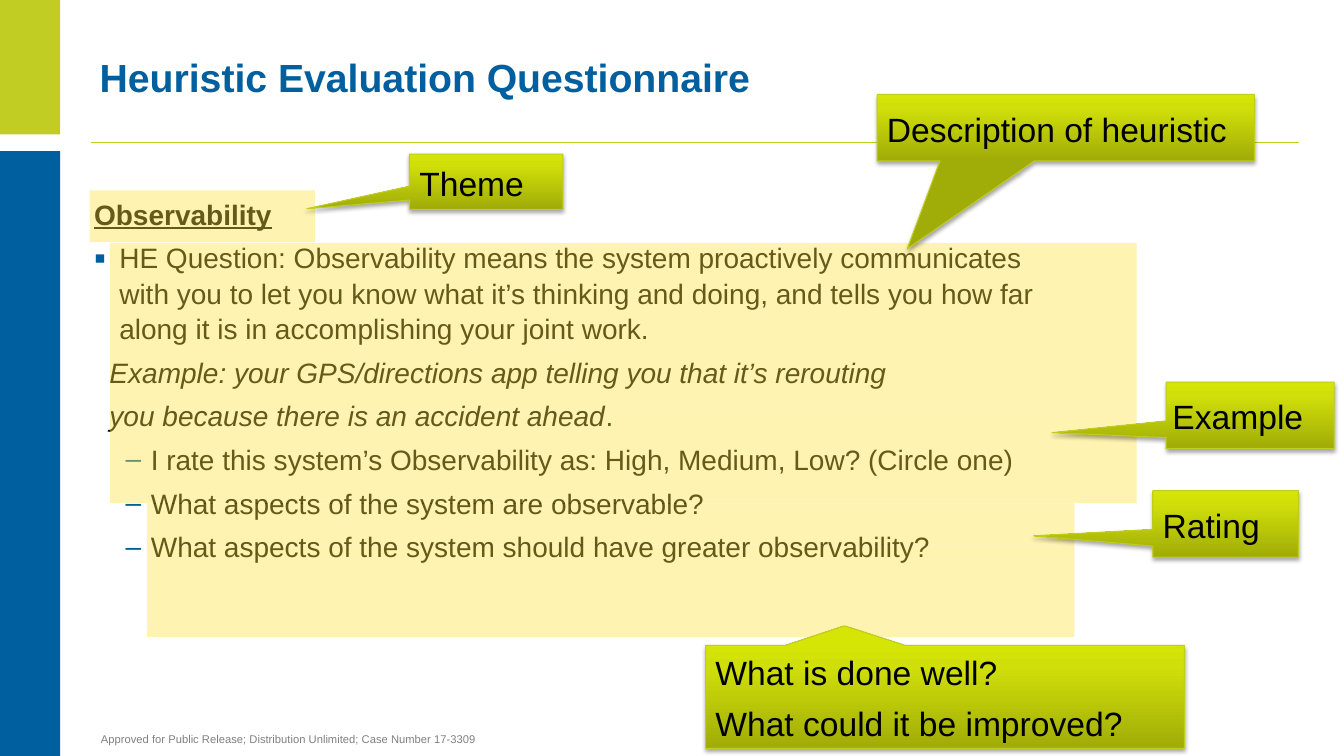
from pptx import Presentation
from pptx.dml.color import RGBColor
from pptx.enum.shapes import MSO_CONNECTOR, MSO_SHAPE
from pptx.enum.text import MSO_ANCHOR, MSO_AUTO_SIZE, PP_ALIGN
from pptx.oxml import parse_xml
from pptx.oxml.ns import nsdecls
from pptx.util import Pt

GREEN, BLUE, BLACK, GRAY, YELLOW = "C1CD23", "005F9E", "000000", "808080", "FFE23C"
NAMESPACE = nsdecls("a")
GRADIENT = f"""<a:gradFill {NAMESPACE} rotWithShape="1"><a:gsLst>
<a:gs pos="0"><a:srgbClr val="A0AC07"/></a:gs>
<a:gs pos="80000"><a:srgbClr val="D0DF09"/></a:gs>
<a:gs pos="100000"><a:srgbClr val="D5E505"/></a:gs>
</a:gsLst><a:lin ang="16200000" scaled="0"/></a:gradFill>"""
SHADOW = f"""<a:effectLst {NAMESPACE}><a:outerShdw blurRad="40000" dist="23000" dir="5400000" rotWithShape="0">
<a:srgbClr val="000000"><a:alpha val="35000"/></a:srgbClr></a:outerShdw></a:effectLst>"""


def color(value):
    return RGBColor.from_string(value)


def add_text(paragraph, text, size, fill, paragraph_format, **font_format):
    for name, value in {"alignment": PP_ALIGN.LEFT, "space_before": Pt(0), **paragraph_format}.items():
        setattr(paragraph, name, value)
    run = paragraph.add_run()
    run.text = text
    for name, value in {"name": "Arial", "size": Pt(size), **font_format}.items():
        setattr(run.font, name, value)
    run.font.color.rgb = color(fill)


presentation = Presentation()
presentation.slide_width, presentation.slide_height = Pt(960), Pt(540)
slide = presentation.slides.add_slide(presentation.slide_layouts[1])
shapes = slide.shapes

rule = shapes.add_connector(MSO_CONNECTOR.STRAIGHT, Pt(65), Pt(102), Pt(928), Pt(102))
rule.line.color.rgb = color(GREEN)
rule.line.width = Pt(1)
rule._element.spPr.append(parse_xml(f"<a:effectLst {NAMESPACE}/>"))

title, body = shapes.title, slide.placeholders[1]
frames = [(title, 64, 21.5, 864, 68.5), (body, 60, 136, 708.5, 324.5)]
for placeholder, left, top, width, height in frames:
    placeholder.left, placeholder.top = Pt(left), Pt(top)
    placeholder.width, placeholder.height = Pt(width), Pt(height)
    placeholder.text_frame.auto_size = MSO_AUTO_SIZE.NONE
title.text_frame.vertical_anchor = MSO_ANCHOR.MIDDLE
add_text(title.text_frame.paragraphs[0], "Heuristic Evaluation Questionnaire", 28, BLUE,
         {"line_spacing": Pt(32)}, bold=True)

spaced = {"line_spacing": 1.05, "space_after": Pt(6)}
# level, left margin, first-line indent, bullet, bullet size, runs
questions = [
    (0, 0, 0, None, 100, [("Observability", {"bold": True, "underline": True})]),
    (0, 18, -18, "▪", 120, [("HE Question: Observability means the system proactively communicates with you "
                             "to let you know what it’s thinking and doing, and tells you how far along it is "
                             "in accomplishing your joint work.", {})]),
    (0, 11, 0, None, 100, [("Example: your GPS/directions app telling you that it’s rerouting", {"italic": True})]),
    (0, 11, 0, None, 100, [("you because there is an accident ahead", {"italic": True}), (".", {})]),
    (1, 40.5, -18, "–", 100, [("I rate this system’s Observability as: High, Medium, Low? (Circle one)", {})]),
    (1, 40.5, -18, "–", 100, [("What aspects of the system are observable?", {})]),
    (1, 40.5, -18, "–", 100, [("What aspects of the system should have greater observability?", {})]),
]
for index, (level, margin, indent, bullet, bullet_size, runs) in enumerate(questions):
    paragraph = body.text_frame.add_paragraph() if index else body.text_frame.paragraphs[0]
    paragraph.level = level
    properties = paragraph._p.get_or_add_pPr()
    properties.set("marL", str(Pt(margin)))
    properties.set("indent", str(Pt(indent)))
    if bullet:
        for element in (f'<a:buClr {NAMESPACE}><a:srgbClr val="{BLUE}"/></a:buClr>',
                        f'<a:buSzPct {NAMESPACE} val="{bullet_size * 1000}"/>',
                        f'<a:buFont {NAMESPACE} typeface="Arial"/>',
                        f'<a:buChar {NAMESPACE} char="{bullet}"/>'):
            properties.append(parse_xml(element))
    else:
        properties.append(parse_xml(f"<a:buNone {NAMESPACE}/>"))
    for text, font_format in runs:
        add_text(paragraph, text, 20, BLACK, spaced, **font_format)

rectangles = [
    (0, 0, 43, 96, GREEN, 100),
    (0, 108, 43, 432, BLUE, 100),
    (64, 136, 161, 37, YELLOW, 40),
    (78.5, 173.5, 733.5, 121, YELLOW, 40),
    (78.5, 294.5, 733.5, 65, YELLOW, 40),
    (105, 359.5, 662.5, 29.5, YELLOW, 40),
    (105, 389, 662.5, 66, YELLOW, 40),
]
for left, top, width, height, fill, opacity in rectangles:
    rectangle = shapes.add_shape(MSO_SHAPE.RECTANGLE, Pt(left), Pt(top), Pt(width), Pt(height))
    rectangle.shadow.inherit = False
    rectangle.fill.solid()
    rectangle.fill.fore_color.rgb = color(fill)
    rectangle.line.fill.background()
    if opacity < 100:
        fill_color = rectangle._element.spPr.find(".//{*}srgbClr")
        fill_color.append(parse_xml(f'<a:alpha {NAMESPACE} val="{opacity * 1000}"/>'))

callouts = [
    (292.5, 110, 109.5, 39.5, (-1.17, 0.49), 7, ["Theme"]),
    (626.5, 67.5, 269.5, 47.5, (-0.42, 1.82), 7, ["Description of heuristic"]),
    (833, 273, 120, 47.5, (-1.18, 0.26), 4.5, ["Example"]),
    (823.5, 350.5, 104, 47.5, (-1.32, 0.18), 7, ["Rating"]),
    (504, 461, 342, 73.5, (-0.21, -0.69), 7, ["What is done well?", "What could it be improved?"]),
]
for left, top, width, height, tip, inset, lines in callouts:
    callout = shapes.add_shape(MSO_SHAPE.RECTANGULAR_CALLOUT, Pt(left), Pt(top), Pt(width), Pt(height))
    callout.adjustments[0], callout.adjustments[1] = tip
    callout._element.spPr.insert(2, parse_xml(GRADIENT))
    callout.line.color.rgb = color("C0CD1E")
    callout.line.width = Pt(0.75)
    callout._element.spPr.append(parse_xml(SHADOW))
    frame = callout.text_frame
    frame.word_wrap = True
    frame.vertical_anchor = MSO_ANCHOR.MIDDLE
    frame.margin_left, frame.margin_right = Pt(inset), Pt(0)
    for index, line in enumerate(lines):
        paragraph = frame.add_paragraph() if index else frame.paragraphs[0]
        add_text(paragraph, line, 24, BLACK, spaced)

release = shapes.add_textbox(Pt(65), Pt(519), Pt(612), Pt(17.5)).text_frame
release.word_wrap = True
release.vertical_anchor = MSO_ANCHOR.BOTTOM
add_text(release.paragraphs[0], "Approved for Public Release; Distribution Unlimited; Case Number 17-3309",
         8, GRAY, {"line_spacing": Pt(13)})

presentation.save("out.pptx")
